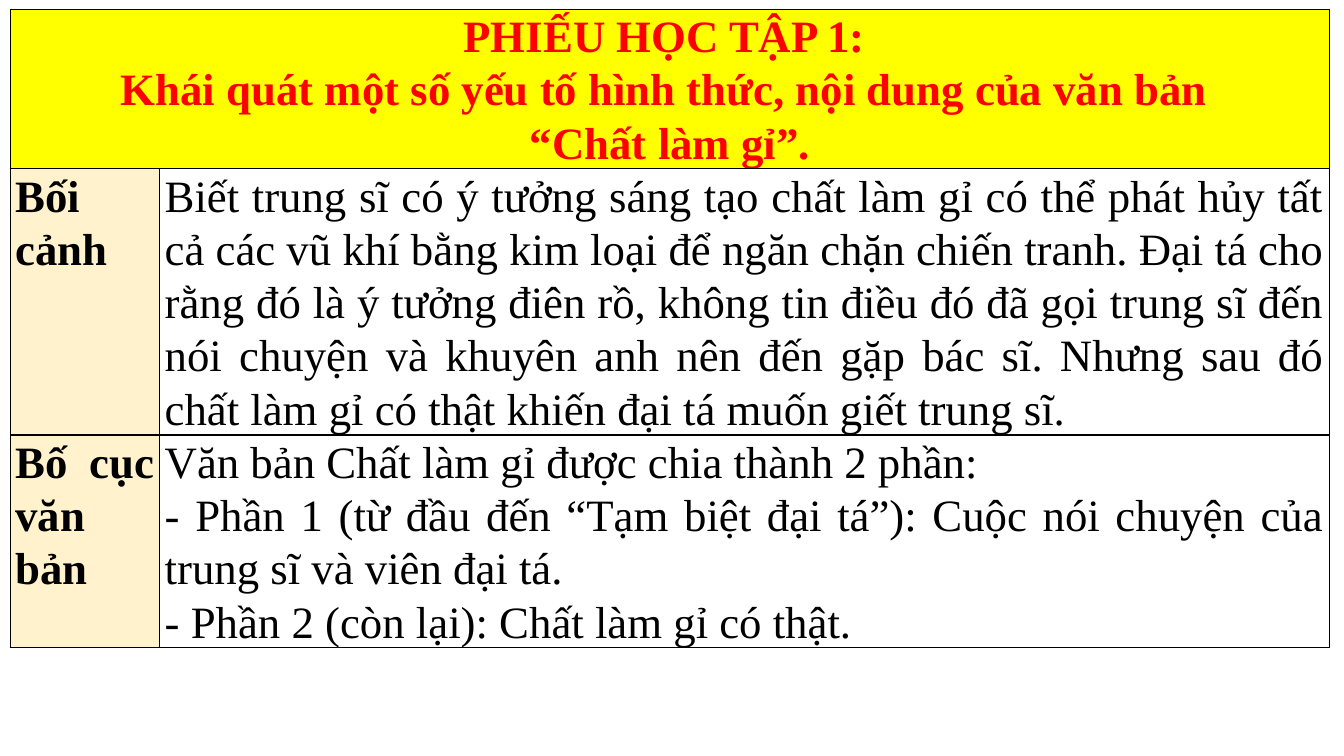
from lxml.etree import SubElement
from pptx import Presentation
from pptx.dml.color import RGBColor
from pptx.enum.text import PP_ALIGN as Align
from pptx.oxml.ns import qn
from pptx.util import Cm, Pt

RED, BLACK, WHITE = "FF0000", "000000", "FFFFFF"
YELLOW, CREAM = "FFFF00", "FFF2CC"

HEADING = [
    "PHIẾU HỌC TẬP 1: ",
    "Khái quát một số yếu tố hình thức, nội dung của văn bản ",
    "“Chất làm gỉ”.",
]
SECTIONS = [
    ("Bối cảnh", [
        "Biết trung sĩ có ý tưởng sáng tạo chất làm gỉ có thể phát hủy tất cả "
        "các vũ khí bằng kim loại để ngăn chặn chiến tranh. Đại tá cho rằng đó "
        "là ý tưởng điên rồ, không tin điều đó đã gọi trung sĩ đến nói chuyện "
        "và khuyên anh nên đến gặp bác sĩ. Nhưng sau đó chất làm gỉ có thật "
        "khiến đại tá muốn giết trung sĩ.",
    ]),
    ("Bố cục văn bản", [
        "Văn bản Chất làm gỉ được chia thành 2 phần:",
        "- Phần 1 (từ đầu đến “Tạm biệt đại tá”): Cuộc nói chuyện của trung sĩ "
        "và viên đại tá.",
        "- Phần 2 (còn lại): Chất làm gỉ có thật.",
    ]),
]
LABEL_WIDTH = Cm(3.76)
LINE_HEIGHT = Cm(1.34)
ROW_LINES = [3, 5, 4]


def color(value):
    return RGBColor.from_string(value)


def add_borders(cell, width=Pt(1)):
    properties = cell._tc.get_or_add_tcPr()
    for side in ("lnL", "lnR", "lnT", "lnB"):
        line = SubElement(properties, qn(f"a:{side}"), w=str(width))
        fill = SubElement(line, qn("a:solidFill"))
        SubElement(fill, qn("a:srgbClr"), val=BLACK)


def fill_cell(cell, lines, background, ink=BLACK, bold=False, align=Align.JUSTIFY):
    cell.fill.solid()
    cell.fill.fore_color.rgb = color(background)
    cell.margin_left = cell.margin_right = Cm(0.13)
    cell.margin_top = cell.margin_bottom = 0
    cell.text = "\n".join(lines)
    for para in cell.text_frame.paragraphs:
        para.alignment = align
        para.line_spacing = 1.07
        para.font.name = "Times New Roman"
        para.font.size = Pt(32)
        para.font.bold = bold
        para.font.color.rgb = color(ink)


def add_worksheet(slide, left, top, width):
    height = LINE_HEIGHT * sum(ROW_LINES)
    frame = slide.shapes.add_table(len(ROW_LINES), 2, left, top, width, height)
    table = frame.table
    table.first_row = table.horz_banding = False
    table.columns[0].width = LABEL_WIDTH
    table.columns[1].width = width - LABEL_WIDTH
    for row, line_count in zip(table.rows, ROW_LINES):
        row.height = LINE_HEIGHT * line_count
        for cell in row.cells:
            add_borders(cell)

    # Heading across both columns
    heading = table.cell(0, 0)
    heading.merge(table.cell(0, 1))
    fill_cell(heading, HEADING, YELLOW, RED, bold=True, align=Align.CENTER)

    # Label and explanation rows
    for index, (label, lines) in enumerate(SECTIONS, start=1):
        fill_cell(table.cell(index, 0), [label], CREAM, bold=True)
        fill_cell(table.cell(index, 1), lines, WHITE)


def main():
    deck = Presentation()
    deck.slide_width, deck.slide_height = Cm(33.87), Cm(19.05)
    slide = deck.slides.add_slide(deck.slide_layouts[6])
    add_worksheet(slide, left=Cm(0.26), top=Cm(0.23), width=Cm(33.25))
    deck.save("out.pptx")


if __name__ == "__main__":
    main()
